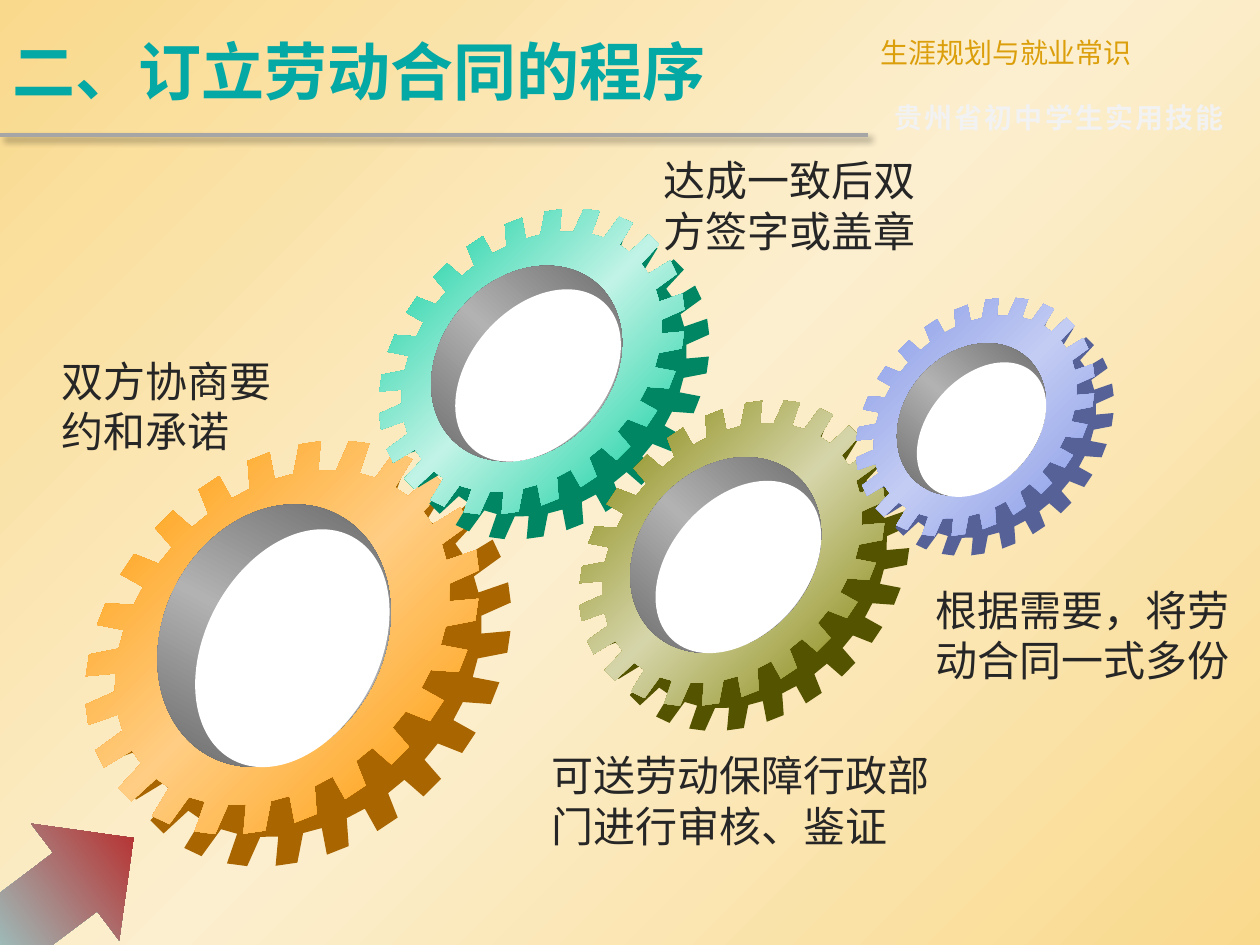
from dataclasses import dataclass
from math import cos, radians, sin

from lxml.etree import SubElement
from pptx import Presentation
from pptx.dml.color import RGBColor
from pptx.enum.shapes import MSO_CONNECTOR, MSO_SHAPE
from pptx.enum.text import MSO_ANCHOR, PP_ALIGN
from pptx.oxml.ns import qn
from pptx.util import Inches, Pt


@dataclass(frozen=True)
class Theme:
    font: str = "Noto Sans CJK SC"
    title: str = "04A8A4"
    series: str = "DC9F0C"
    banner: str = "F2F2F2"
    ink: str = "262626"
    rule: str = "A6A6A6"
    page: tuple = ("F9D98C", "FCEFCF", "F9D98C")
    bore: tuple = ("525252", "B2B2B2", "525252")
    hole: str = "FFFFFF"
    arrow: tuple = ("91FDFA", "C00000")
    title_size: float = 36
    label_size: float = 24
    header_size: float = 16


@dataclass(frozen=True)
class Gear:
    center: tuple
    radius: float
    face: str
    shine: str
    side: str
    bore: tuple
    hole: tuple
    turn: float


THEME = Theme()
TEETH = 24
TOOTH_PROFILE = ((-3.2, 1), (3.2, 1), (4.3, 0.85), (10.7, 0.85))
TILT = 0.91
SKEW = 0.13
DEPTH = 0.15

GEARS = (
    Gear((2.24, 5.06), 1.7, "FF9900", "FFCD83", "A86500",
         (1.3, 3.96, 1.75, 2.17), (1.63, 4.14, 1.38, 2.01), 28.2),
    Gear((4.22, 2.87), 1.32, "00CC99", "C1F3E6", "008663",
         (3.5, 2.04, 1.36, 1.69), (3.73, 2.2, 1.08, 1.56), 41.8),
    Gear((5.81, 4.39), 1.32, "808000", "D5D5AA", "545400",
         (5.08, 3.56, 1.36, 1.69), (5.32, 3.72, 1.08, 1.56), 41.8),
    Gear((7.74, 3.31), 1.03, "8497E6", "C3CCF3", "566297",
         (7.18, 2.67, 1.06, 1.32), (7.37, 2.8, 0.84, 1.22), 41.8),
)

LABELS = (
    ("双方协商要约和承诺", (0.39, 2.77, 2.05, 0.91)),
    ("达成一致后双方签字或盖章", (5.17, 1.18, 2.37, 0.91)),
    ("可送劳动保障行政部门进行审核、鉴证", (4.28, 5.9, 3.32, 0.91)),
    ("根据需要，将劳动合同一式多份", (7.33, 4.59, 2.67, 0.91)),
)


def inches(lengths):
    return [Inches(length) for length in lengths]


def paint_gradient(fill, owner, colors, angle):
    fill.gradient()
    fill.gradient_angle = (360 - angle) % 360
    stops = owner.find(".//" + qn("a:gsLst"))
    for stop in list(stops):
        stops.remove(stop)
    for index, color in enumerate(colors):
        position = 100000 * index // (len(colors) - 1)
        stop = SubElement(stops, qn("a:gs"), pos=str(position))
        SubElement(stop, qn("a:srgbClr"), val=color)


def finish_shape(shape, paint, angle=0):
    shape.shadow.inherit = False
    shape.line.fill.background()
    if isinstance(paint, str):
        shape.fill.solid()
        shape.fill.fore_color.rgb = RGBColor.from_string(paint)
    else:
        paint_gradient(shape.fill, shape._element, paint, angle)


def add_preset(page, kind, frame, turn, paint, angle=0):
    shape = page.shapes.add_shape(kind, *inches(frame))
    shape.rotation = turn
    finish_shape(shape, paint, angle)


def write_text(box, words, size, color, bold=False, align=PP_ALIGN.LEFT):
    box.text_frame.text = words
    box.text_frame.word_wrap = True
    para = box.text_frame.paragraphs[0]
    para.alignment = align
    span = para.runs[0]
    span.font.name = THEME.font
    span.font.size = Pt(size)
    span.font.bold = bold
    span.font.color.rgb = RGBColor.from_string(color)
    SubElement(span.font._element, qn("a:ea"), typeface=THEME.font)
    return span


def add_text(page, words, frame, size, color, **style):
    box = page.shapes.add_textbox(*inches(frame))
    return write_text(box, words, size, color, **style)


def add_title(page, words):
    title = page.shapes.title
    title.left, title.top, title.width, title.height = inches((0, 0.05, 6.89, 1.02))
    write_text(title, words, THEME.title_size, THEME.title, bold=True)
    title.text_frame.vertical_anchor = MSO_ANCHOR.MIDDLE


def add_rule(page):
    rule = page.shapes.add_connector(
        MSO_CONNECTOR.STRAIGHT, *inches((0, 1.07, 6.89, 1.07)))
    rule.line.color.rgb = RGBColor.from_string(THEME.rule)
    rule.line.width = Pt(2.25)
    effects = SubElement(rule._element.spPr, qn("a:effectLst"))
    shadow = SubElement(effects, qn("a:outerShdw"), blurRad=str(Pt(4)),
                        dist=str(Pt(3)), dir=str(45 * 60000), rotWithShape="0")
    color = SubElement(shadow, qn("a:srgbClr"), val="000000")
    SubElement(color, qn("a:alpha"), val="40000")


def gear_outline(gear, shift):
    points = []
    for tooth in range(TEETH):
        for offset, share in TOOTH_PROFILE:
            angle = radians(360 / TEETH * tooth + offset)
            x = gear.radius * share * cos(angle)
            y = gear.radius * share * sin(angle)
            points.append((
                Inches(gear.center[0] + TILT * x - SKEW * y + shift),
                Inches(gear.center[1] + TILT * y - SKEW * x + shift)))
    return points


def add_wheel(page, gear, shift, paint):
    start, *rest = gear_outline(gear, shift)
    builder = page.shapes.build_freeform(*start)
    builder.add_line_segments(rest, close=True)
    finish_shape(builder.convert_to_shape(), paint, 45)


def add_gear(page, gear):
    add_wheel(page, gear, DEPTH * gear.radius, gear.side)
    add_wheel(page, gear, 0, (gear.face, gear.shine, gear.face))
    add_preset(page, MSO_SHAPE.OVAL, gear.bore, gear.turn, THEME.bore, 90)
    add_preset(page, MSO_SHAPE.OVAL, gear.hole, gear.turn, THEME.hole)


def main():
    deck = Presentation()
    deck.slide_width, deck.slide_height = inches((10, 7.5))
    page = deck.slides.add_slide(deck.slide_layouts[5])
    paint_gradient(page.background.fill, page._element, THEME.page, 45)
    add_rule(page)
    add_text(page, "生涯规划与就业常识", (6.89, 0.23, 3.11, 0.37),
             THEME.header_size, THEME.series, align=PP_ALIGN.JUSTIFY)
    banner = add_text(page, "贵州省初中学生实用技能", (7, 0.75, 3, 0.37),
                      THEME.header_size, THEME.banner, bold=True)
    banner.font._element.set("spc", "130")
    add_title(page, "二、订立劳动合同的程序")
    for gear in GEARS:
        add_gear(page, gear)
    for words, frame in LABELS:
        add_text(page, words, frame, THEME.label_size, THEME.ink)
    add_preset(page, MSO_SHAPE.RIGHT_ARROW, (-0.28, 6.52, 1.49, 1.16), 323,
               THEME.arrow)
    deck.save("out.pptx")


if __name__ == "__main__":
    main()
